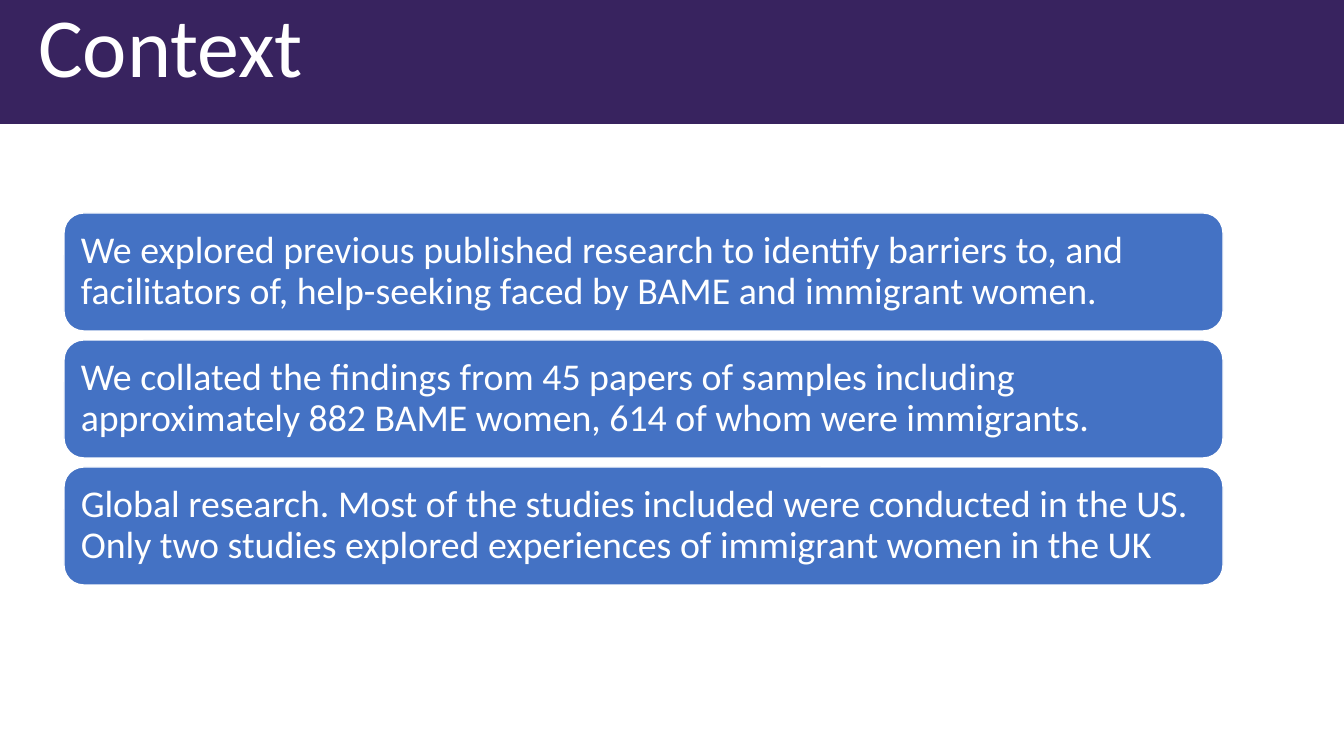
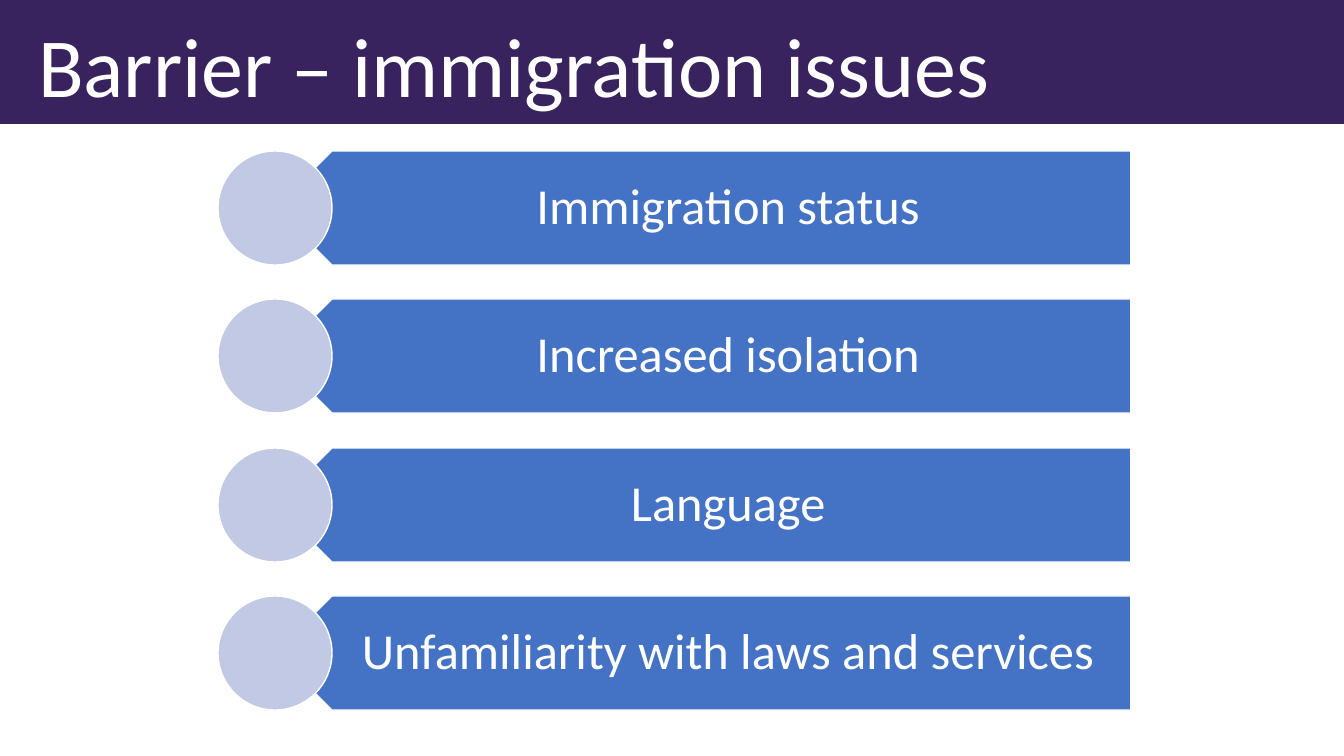
from pptx import Presentation
from pptx.dml.color import RGBColor
from pptx.enum.shapes import MSO_SHAPE
from pptx.enum.text import MSO_ANCHOR, MSO_AUTO_SIZE, PP_ALIGN
from pptx.util import Pt

PURPLE = RGBColor(0x38, 0x23, 0x5F)
BLUE = RGBColor(0x44, 0x72, 0xC4)
PALE = RGBColor(0xC1, 0xC9, 0xE4)
WHITE = RGBColor(0xFF, 0xFF, 0xFF)
FONT = "Calibri"
WIDE, HIGH = 1344, 756
RECT, ROUND = MSO_SHAPE.RECTANGLE, MSO_SHAPE.ROUNDED_RECTANGLE
PLATE, OVAL = MSO_SHAPE.PENTAGON, MSO_SHAPE.OVAL
TOP, MIDDLE = MSO_ANCHOR.TOP, MSO_ANCHOR.MIDDLE
LEFT, CENTER = PP_ALIGN.LEFT, PP_ALIGN.CENTER
NO_FIT = MSO_AUTO_SIZE.NONE

FACTS = [
    "We explored previous published research to identify barriers to, and "
    "facilitators of, help-seeking faced by BAME and immigrant women.",
    "We collated the findings from 45 papers of samples including "
    "approximately 882 BAME women, 614 of whom were immigrants.",
    "Global research. Most of the studies included were conducted in the US. "
    "Only two studies explored experiences of immigrant women in the UK",
]
ISSUES = [
    "Immigration status",
    "Increased isolation",
    "Language",
    "Unfamiliarity with laws and services",
]


def px(num):
    """Turn px into EMU."""
    return num * 12192000 // WIDE


def write(shape, text, size, align=LEFT, anchor=MIDDLE, pads=(10, 5, 10, 5)):
    """Fill a shape with one formatted paragraph."""
    frame = shape.text_frame
    frame.text = text
    frame.word_wrap = True
    frame.auto_size = NO_FIT
    frame.vertical_anchor = anchor
    (frame.margin_left, frame.margin_top,
     frame.margin_right, frame.margin_bottom) = map(px, pads)
    para = frame.paragraphs[0]
    para.alignment = align
    para.line_spacing = 0.9
    font = para.runs[0].font
    font.name, font.size, font.color.rgb = FONT, Pt(size), WHITE


class Deck:
    """Hold the style and the current slide."""

    def __init__(self):
        """Set the slide size and give the layout its band."""
        self.prs = Presentation()
        self.prs.slide_width, self.prs.slide_height = px(WIDE), px(HIGH)
        self.base = self.prs.slide_layouts[5]
        self.slide = None
        self.band = None

    def start(self, title, top, height):
        """Add a slide with its title."""
        self.slide = self.prs.slides.add_slide(self.base)
        if self.band is None:
            self.band = self.block(RECT, 0, 0, WIDE, 123, PURPLE, PURPLE)
            self.base.shapes.element.insert(2, self.band.element)
        head = self.slide.shapes.title
        head.left, head.top = px(28), px(top)
        head.width, head.height = px(1046), px(height)
        write(head, title, 60, anchor=TOP)

    def block(self, kind, left, top, width, height, fill, edge=WHITE):
        """Draw a filled shape with a thin edge."""
        shape = self.slide.shapes.add_shape(
            kind, px(left), px(top), px(width), px(height))
        shape.shadow.inherit = False
        shape.fill.solid()
        shape.fill.fore_color.rgb = fill
        shape.line.color.rgb = edge
        shape.line.width = Pt(1)
        return shape

    def card(self, text, top):
        """Draw a rounded card with a statement."""
        card = self.block(ROUND, 64, top, 1159, 118, BLUE)
        write(card, text, 27, pads=(11, 11, 11, 11))

    def label(self, text, top):
        """Draw a left-pointing plate with a disc at its tip."""
        plate = self.block(PLATE, 275, top, 856, 114, BLUE)
        plate.element.spPr.xfrm.set("flipH", "1")
        write(plate, text, 36, CENTER, pads=(50, 15, 28, 15))
        self.block(OVAL, 218, top, 114, 114, PALE)


def main():
    """Build both slides and save them."""
    deck = Deck()
    deck.start("Context", 0, 150)
    for row, text in enumerate(FACTS):
        deck.card(text, 213 + row * 127)
    deck.start("Barrier – immigration issues", 20, 83)
    for row, text in enumerate(ISSUES):
        deck.label(text, 151 + row * 297 // 2)
    deck.prs.save("out.pptx")


if __name__ == "__main__":
    main()
